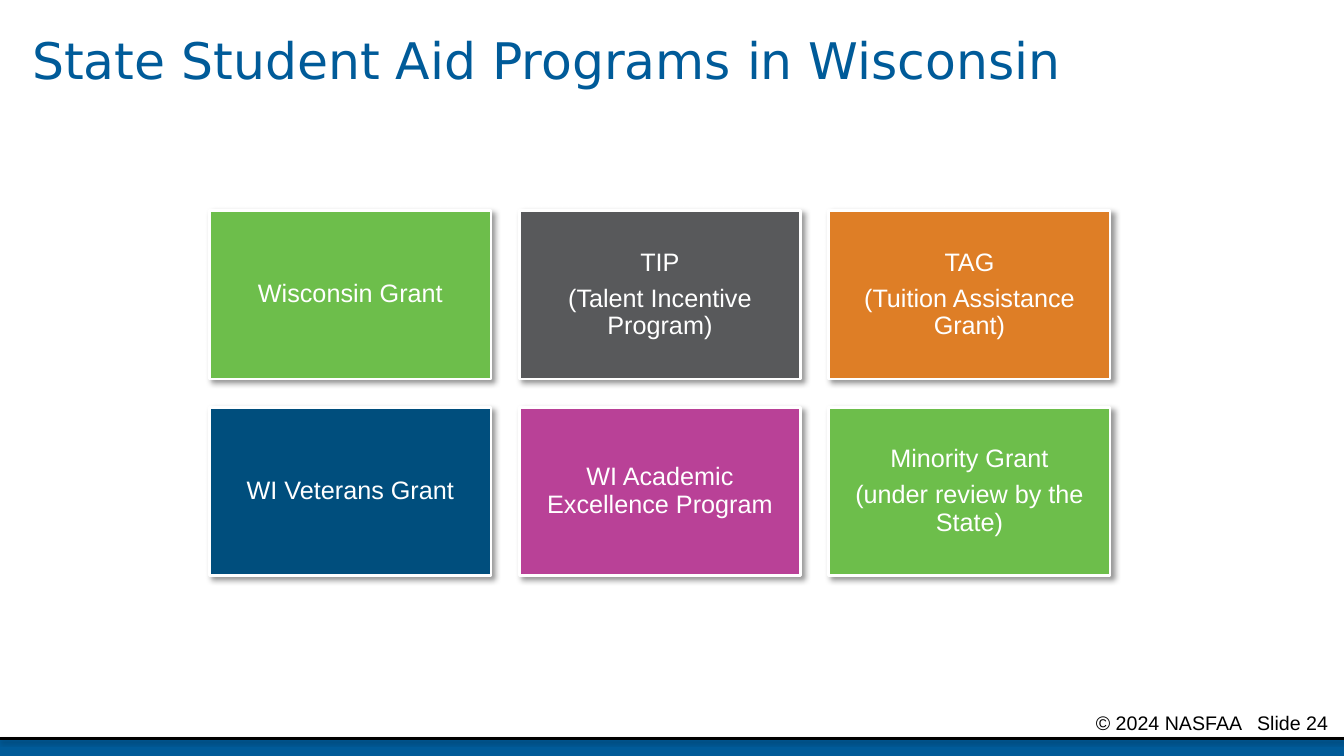
from lxml import etree
from pptx import Presentation
from pptx.dml.color import RGBColor
from pptx.enum.shapes import MSO_CONNECTOR, MSO_SHAPE
from pptx.enum.text import MSO_ANCHOR, MSO_AUTO_SIZE, PP_ALIGN
from pptx.oxml.ns import qn
from pptx.util import Inches, Pt

RECTANGLE = MSO_SHAPE.RECTANGLE
STRAIGHT = MSO_CONNECTOR.STRAIGHT
MIDDLE = MSO_ANCHOR.MIDDLE
NO_AUTOFIT = MSO_AUTO_SIZE.NONE
LEFT, CENTER = PP_ALIGN.LEFT, PP_ALIGN.CENTER

WHITE = RGBColor(0xFF, 0xFF, 0xFF)
BLACK = RGBColor(0x00, 0x00, 0x00)
BLUE = RGBColor(0x00, 0x5B, 0x99)
NAVY = RGBColor(0x00, 0x4E, 0x7D)
GREEN = RGBColor(0x6D, 0xBE, 0x4B)
GRAY = RGBColor(0x58, 0x59, 0x5B)
ORANGE = RGBColor(0xDE, 0x7E, 0x26)
MAGENTA = RGBColor(0xB9, 0x41, 0x97)

SLIDE_WIDTH, SLIDE_HEIGHT = 13.33, 7.5
FOOTER_TOP = 7.33
CARD_COLUMNS = 3
CARD_LEFT, CARD_TOP = 2.08, 2.09
CARD_WIDTH, CARD_HEIGHT = 2.79, 1.67
CARD_GAP = 0.28

PROGRAMS = [
    (GREEN, ["Wisconsin Grant"]),
    (GRAY, ["TIP", "(Talent Incentive Program)"]),
    (ORANGE, ["TAG", "(Tuition Assistance Grant)"]),
    (NAVY, ["WI Veterans Grant"]),
    (MAGENTA, ["WI Academic Excellence Program"]),
    (GREEN, ["Minority Grant", "(under review by the State)"]),
]


def set_all(target, values):
    for name, value in values.items():
        setattr(target, name, value)


class SlideBuilder:
    title_font = {"name": "DejaVu Sans", "size": Pt(36)}
    card_font = {"name": "Arial", "size": Pt(18)}
    footer_font = {"name": "Arial", "size": Pt(14)}
    title_paragraph = {"alignment": LEFT, "line_spacing": 0.9}
    card_paragraph = {"alignment": CENTER, "line_spacing": 0.9, "space_after": Pt(6.3)}
    card_frame = {
        "word_wrap": True,
        "vertical_anchor": MIDDLE,
        **{f"margin_{side}": Inches(0.07) for side in ("left", "right", "top", "bottom")},
    }

    def __init__(self, slide):
        self.slide = slide

    def fill_paragraph(self, paragraph, text, font, color, layout):
        paragraph.text = text
        set_all(paragraph, layout)
        set_all(paragraph.font, font)
        paragraph.font.color.rgb = color

    def add_shadow(self, shape, opacity, blur, distance, angle):
        """Put an outer black shadow on a shape or connector, in points and degrees."""
        properties = shape._element.spPr
        for effects in properties.findall(qn("a:effectLst")):
            properties.remove(effects)
        effects = etree.SubElement(properties, qn("a:effectLst"))
        shadow = etree.SubElement(
            effects, qn("a:outerShdw"), blurRad=str(Pt(blur)), dist=str(Pt(distance)),
            dir=str(angle * 60000), algn="ctr", rotWithShape="0")
        color = etree.SubElement(shadow, qn("a:srgbClr"), val=str(BLACK))
        etree.SubElement(color, qn("a:alpha"), val=str(opacity * 1000))

    def add_rectangle(self, left, top, width, height, fill):
        shape = self.slide.shapes.add_shape(
            RECTANGLE, Inches(left), Inches(top), Inches(width), Inches(height))
        shape.shadow.inherit = False
        shape.fill.solid()
        shape.fill.fore_color.rgb = fill
        shape.line.fill.background()
        return shape

    def add_title(self, text):
        title = self.slide.shapes.title
        set_all(title, {"left": Inches(0.22), "top": Inches(0),
                        "width": Inches(12.89), "height": Inches(1.25)})
        set_all(title.text_frame, {"word_wrap": True, "vertical_anchor": MIDDLE,
                                   "auto_size": NO_AUTOFIT})
        self.fill_paragraph(title.text_frame.paragraphs[0], text, self.title_font, BLUE,
                            self.title_paragraph)

    def add_footer(self, copyright_line, slide_label):
        self.add_rectangle(0, FOOTER_TOP, SLIDE_WIDTH, SLIDE_HEIGHT - FOOTER_TOP, BLUE)
        rule = self.slide.shapes.add_connector(
            STRAIGHT, Inches(0), Inches(FOOTER_TOP), Inches(SLIDE_WIDTH), Inches(FOOTER_TOP))
        rule.line.color.rgb = BLACK
        rule.line.width = Pt(2)
        self.add_shadow(rule, 38, 3.1, 1.6, 90)

        box = self.slide.shapes.add_textbox(
            Inches(10.77), Inches(7), Inches(2.56), Inches(0.25))
        box.text_frame.word_wrap = True
        paragraph = box.text_frame.paragraphs[0]
        tabs = etree.SubElement(paragraph._p.get_or_add_pPr(), qn("a:tabLst"))
        etree.SubElement(tabs, qn("a:tab"), pos=str(Inches(1.6)), algn="l")
        self.fill_paragraph(paragraph, f"{copyright_line}\t{slide_label}", self.footer_font,
                            BLACK, {"alignment": LEFT})

    def add_card(self, left, top, fill, lines):
        card = self.add_rectangle(left, top, CARD_WIDTH, CARD_HEIGHT, fill)
        card.line.color.rgb = WHITE
        card.line.width = Pt(2)
        self.add_shadow(card, 40, 4, 3, 45)
        frame = card.text_frame
        set_all(frame, self.card_frame)
        for index, line in enumerate(lines):
            paragraph = frame.add_paragraph() if index else frame.paragraphs[0]
            self.fill_paragraph(paragraph, line, self.card_font, WHITE, self.card_paragraph)


def main():
    presentation = Presentation()
    presentation.slide_width = Inches(SLIDE_WIDTH)
    presentation.slide_height = Inches(SLIDE_HEIGHT)
    title_only = presentation.slide_layouts[5]
    builder = SlideBuilder(presentation.slides.add_slide(title_only))

    builder.add_footer("© 2024 NASFAA", "Slide 24")
    builder.add_title("State Student Aid Programs in Wisconsin")
    for index, (fill, lines) in enumerate(PROGRAMS):
        row, column = divmod(index, CARD_COLUMNS)
        builder.add_card(CARD_LEFT + column * (CARD_WIDTH + CARD_GAP),
                         CARD_TOP + row * (CARD_HEIGHT + CARD_GAP), fill, lines)
    presentation.save("out.pptx")


if __name__ == "__main__":
    main()
